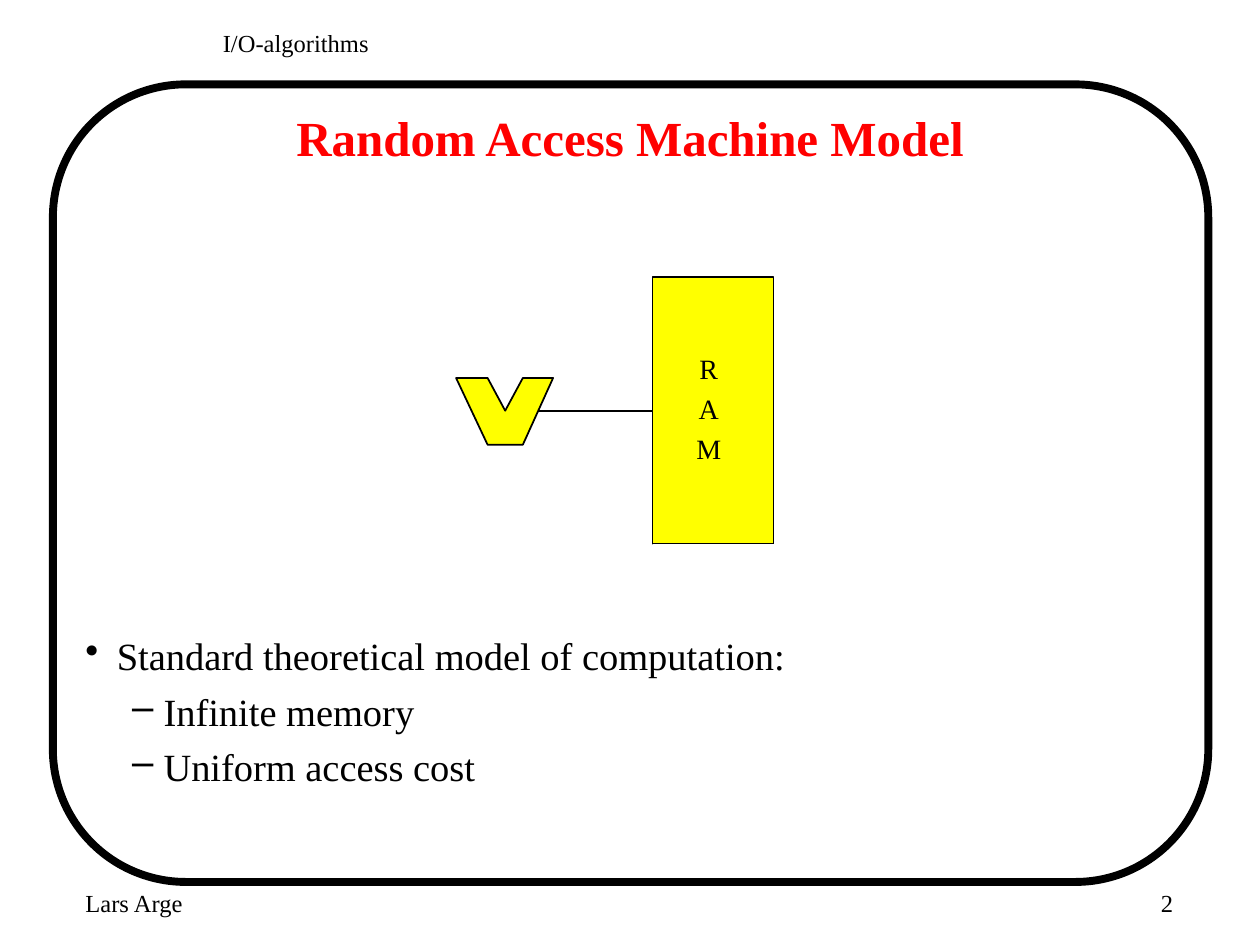
from lxml import etree
from pptx import Presentation
from pptx.dml.color import RGBColor
from pptx.enum.shapes import MSO_CONNECTOR as Connector, MSO_SHAPE as Shape
from pptx.enum.text import MSO_ANCHOR as Anchor, PP_ALIGN as Align
from pptx.oxml.ns import qn
from pptx.util import Inches, Pt

BLACK = RGBColor(0x00, 0x00, 0x00)
WHITE = RGBColor(0xFF, 0xFF, 0xFF)
RED = RGBColor(0xFF, 0x00, 0x00)
YELLOW = RGBColor(0xFF, 0xFF, 0x00)


class SlideBuilder:
    font = "Times New Roman"
    spacing = 0.24  # space before a paragraph, as a share of its text size

    def __init__(self, slide):
        self.slide = slide

    def paint(self, shape, fill, line, width):
        shape.shadow.inherit = False
        for target, color in ((shape.fill, fill), (shape.line.fill, line)):
            if color is None:
                target.background()
            else:
                target.solid()
                target.fore_color.rgb = color
        if line is not None:
            shape.line.width = Pt(width)
        return shape

    def box(self, kind, left, top, width, height, fill=None, line=None, weight=1):
        shape = self.slide.shapes.add_shape(
            kind, Inches(left), Inches(top), Inches(width), Inches(height))
        return self.paint(shape, fill, line, weight)

    def polygon(self, points, fill, line, weight=1):
        corners = [(Inches(x), Inches(y)) for x, y in points]
        builder = self.slide.shapes.build_freeform(*corners[0])
        builder.add_line_segments(corners[1:], close=True)
        return self.paint(builder.convert_to_shape(), fill, line, weight)

    def line(self, start, end, color, weight=1):
        connector = self.slide.shapes.add_connector(
            Connector.STRAIGHT, *(Inches(value) for value in (*start, *end)))
        connector.line.color.rgb = color
        connector.line.width = Pt(weight)
        properties = connector._element.find(qn("p:spPr"))
        etree.SubElement(properties, qn("a:effectLst"))
        return connector

    def text(self, left, top, width, height, lines, size, color=BLACK, bold=False,
             align=Align.LEFT, anchor=Anchor.TOP, wrap=True, spaced=False):
        shape = self.slide.shapes.add_textbox(
            Inches(left), Inches(top), Inches(width), Inches(height))
        frame = shape.text_frame
        frame.word_wrap = wrap
        frame.vertical_anchor = anchor
        for index, words in enumerate(lines):
            paragraph = frame.paragraphs[0] if index == 0 else frame.add_paragraph()
            paragraph.alignment = align
            if spaced:
                paragraph.space_before = Pt(round(size * self.spacing, 1))
            run = paragraph.add_run()
            run.text = words
            run.font.name = self.font
            run.font.size = Pt(size)
            run.font.bold = bold
            run.font.color.rgb = color
        return frame

    def bullets(self, left, top, width, height, items, size):
        """Add a list of (level, words) items with hanging bullets."""
        frame = self.text(left, top, width, height,
                          [words for _, words in items], size, spaced=True)
        for paragraph, (level, _) in zip(frame.paragraphs, items):
            paragraph.level = level
            properties = paragraph._p.get_or_add_pPr()
            properties.set("marL", str(Inches((0.25, 0.62)[level])))
            properties.set("indent", str(Inches(-0.25)))
            bullet = etree.SubElement(properties, qn("a:buChar"))
            bullet.set("char", "•–"[level])


def main():
    presentation = Presentation()
    presentation.slide_width = Inches(10)
    presentation.slide_height = Inches(7.5)
    builder = SlideBuilder(presentation.slides.add_slide(presentation.slide_layouts[6]))

    builder.box(Shape.FLOWCHART_ALTERNATE_PROCESS, 0.42, 0.67, 9.17, 6.33,
                line=BLACK, weight=4.5)
    builder.text(0.58, 7, 2.08, 0.5, ["Lars Arge"], 14)
    builder.text(1.67, 0.17, 6.58, 0.42, ["I/O-algorithms"], 14)
    builder.text(7.33, 7, 2.08, 0.5, ["2"], 14, align=Align.RIGHT)
    builder.text(0.75, 0.75, 8.5, 0.67, ["Random Access Machine Model"], 28,
                 color=RED, bold=True, align=Align.CENTER, anchor=Anchor.MIDDLE)
    builder.bullets(0.58, 4.97, 8.83, 2.23, [
        (0, "Standard theoretical model of computation:"),
        (1, "Infinite memory"),
        (1, "Uniform access cost"),
    ], 22)

    memory = builder.box(Shape.RECTANGLE, 5.18, 2.2, 0.96, 2.12, YELLOW, BLACK)
    bus = builder.line((4.26, 3.26), (5.18, 3.26), BLACK)
    bus.end_connect(memory, 1)
    builder.polygon([(3.62, 3), (3.87, 3), (4.01, 3.26), (4.15, 3), (4.39, 3),
                     (4.15, 3.53), (3.87, 3.53)], YELLOW, BLACK)
    builder.text(5.42, 2.74, 0.41, 1.01, "RAM", 16, align=Align.CENTER,
                 wrap=False, spaced=True)

    # White cover leaves the memory open at the bottom, as it is infinite
    builder.line((5.18, 4.33), (6.14, 4.33), WHITE, 1.38)
    builder.box(Shape.RECTANGLE, 5.02, 4.32, 1.37, 0.21, WHITE)

    presentation.save("out.pptx")


if __name__ == "__main__":
    main()
